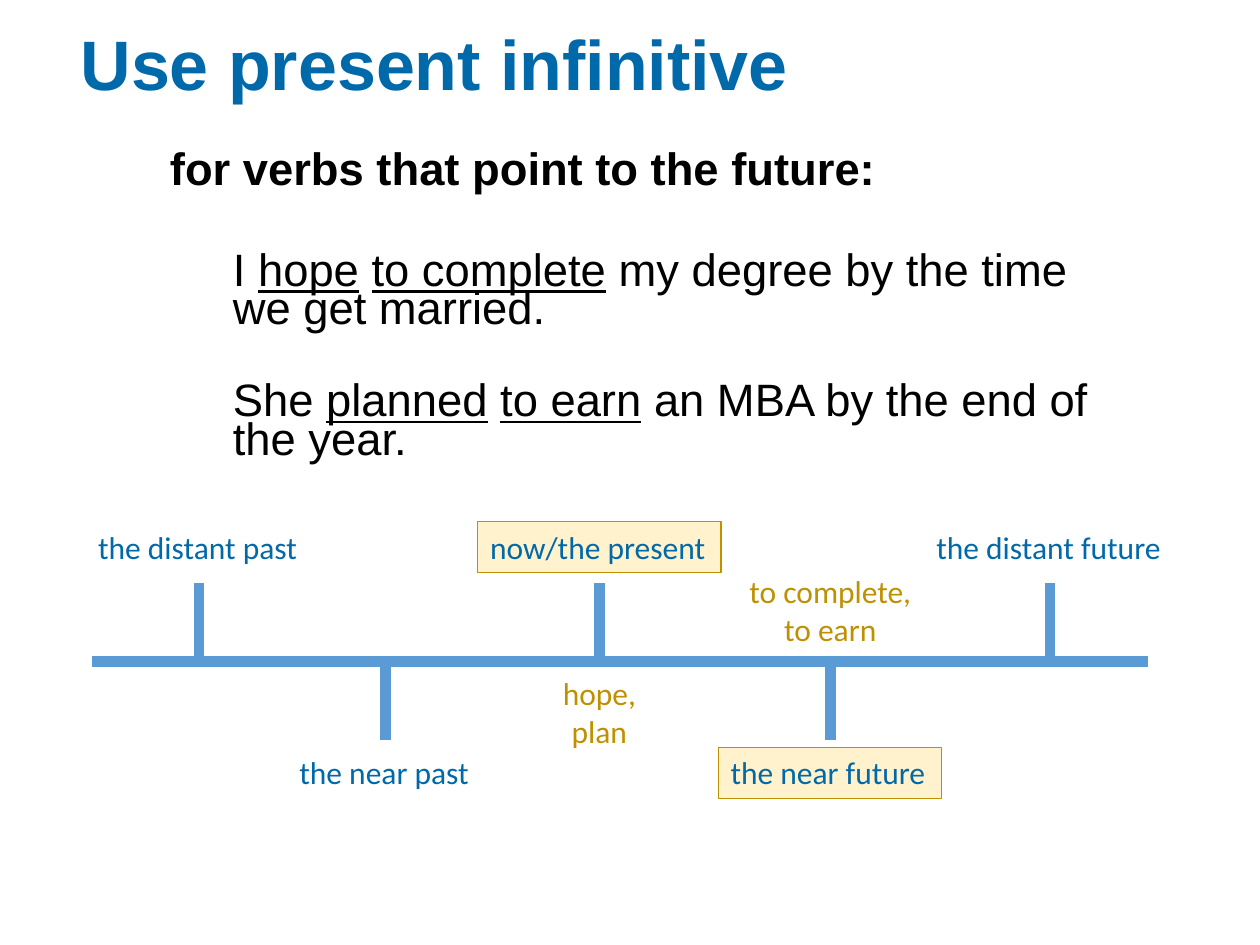
from typing import NamedTuple

from lxml.etree import SubElement
from pptx import Presentation
from pptx.dml.color import RGBColor
from pptx.enum.shapes import MSO_CONNECTOR, MSO_SHAPE
from pptx.enum.text import MSO_ANCHOR, MSO_AUTO_SIZE, PP_ALIGN
from pptx.oxml.ns import qn
from pptx.util import Pt

BLUE, BAR, GOLD, CREAM, BLACK = "0069AA", "5B9BD5", "BF9000", "FFF2CC", "000000"
AXIS, TICK = 378, 44.6  # height of the time line, length of a tick
ABOVE, BELOW = 298, 427  # tops of the label rows


class Label(NamedTuple):
    left: float
    top: float
    width: float
    lines: list[str]
    boxed: bool = False
    color: str = BLUE


class Point(NamedTuple):
    x: float
    side: int  # -1 is above the line, 1 is below


class Line(NamedTuple):
    runs: list[str]  # every second run is underlined
    gap: float
    inset: float = 36
    bold: bool = False


LABELS = [
    Label(49, ABOVE, 129.6, ["the distant past"]),
    Label(273, ABOVE, 139, ["now/the present"], True),
    Label(528, ABOVE, 144, ["the distant future"]),
    Label(164, BELOW, 112.5, ["the near past"]),
    Label(410.4, BELOW, 127.5, ["the near future"], True),
    Label(314, 381.6, 57, ["hope,", "plan"], color=GOLD),
    Label(420.5, 323.3, 108, ["to complete,", "to earn"], color=GOLD),
]
POINTS = [Point(113.8, -1), Point(220.3, 1), Point(342.7, -1),
          Point(474.5, 1), Point(600, -1)]
LINES = [
    Line(["for verbs that point to the future:"], 0, 0, True),
    Line(["I ", "hope", " ", "to complete",
          " my degree by the time we get married."], 36),
    Line(["She ", "planned", " ", "to earn",
          " an MBA by the end of the year."], 31),
]


def paint(code: str) -> RGBColor:
    return RGBColor.from_string(code)


def style(para, name: str, size: float, color: str, bold: bool = False) -> None:
    font = para.font
    font.name, font.size, font.bold = name, Pt(size), bold
    font.color.rgb = paint(color)


def stroke(shapes, x1: float, y1: float, x2: float, y2: float) -> None:
    bar = shapes.add_connector(MSO_CONNECTOR.STRAIGHT, Pt(x1), Pt(y1), Pt(x2), Pt(y2))
    bar.line.color.rgb = paint(BAR)
    bar.line.width = Pt(6)
    SubElement(bar._element.spPr, qn("a:effectLst"))


def tag(shapes, label: Label) -> None:
    height = 7.2 + 21.9 * len(label.lines)
    place = Pt(label.left), Pt(label.top), Pt(label.width), Pt(height)
    if label.boxed:
        box = shapes.add_shape(MSO_SHAPE.RECTANGLE, *place)
        box.shadow.inherit = False
        box.fill.solid()
        box.fill.fore_color.rgb = paint(CREAM)
        box.line.color.rgb = paint(GOLD)
        box.line.width = Pt(0.75)
    else:
        box = shapes.add_textbox(*place)
    frame = box.text_frame
    frame.word_wrap = False
    frame.auto_size = MSO_AUTO_SIZE.SHAPE_TO_FIT_TEXT
    frame.vertical_anchor = MSO_ANCHOR.TOP
    frame.text = "\n".join(label.lines)
    for para in frame.paragraphs:
        para.alignment = PP_ALIGN.CENTER if len(label.lines) > 1 else PP_ALIGN.LEFT
        style(para, "Calibri", 18, label.color)


def title(shapes, text: str) -> None:
    frame = shapes.add_textbox(Pt(39), Pt(21), Pt(643), Pt(36)).text_frame
    frame.word_wrap = True
    frame.vertical_anchor = MSO_ANCHOR.MIDDLE
    para = frame.paragraphs[0]
    para.text = text
    para.line_spacing = 0.9
    style(para, "Arial", 40, BLUE, True)


def body(shapes, lines: list[Line]) -> None:
    frame = shapes.add_textbox(Pt(90), Pt(85), Pt(541), Pt(190)).text_frame
    frame.word_wrap = True
    for i, line in enumerate(lines):
        para = frame.add_paragraph() if i else frame.paragraphs[0]
        para.line_spacing = 0.7
        para.space_before = Pt(line.gap)
        para._p.get_or_add_pPr().set("marL", str(Pt(line.inset)))
        style(para, "Arial", 25.9, BLACK, line.bold)
        for j, text in enumerate(line.runs):
            run = para.add_run()
            run.text = text
            if j % 2:
                run.font.underline = True


def main() -> None:
    deck = Presentation()
    deck.slide_width, deck.slide_height = Pt(720), Pt(540)
    shapes = deck.slides.add_slide(deck.slide_layouts[6]).shapes

    # Time line with its ticks
    for point in POINTS:
        stroke(shapes, point.x, AXIS, point.x, AXIS + point.side * TICK)
    stroke(shapes, 52.6, AXIS, 656, AXIS)

    # Heading and examples
    title(shapes, "Use present infinitive")
    body(shapes, LINES)

    # Names of the times and the verbs
    for label in LABELS:
        tag(shapes, label)

    deck.save("out.pptx")


if __name__ == "__main__":
    main()
